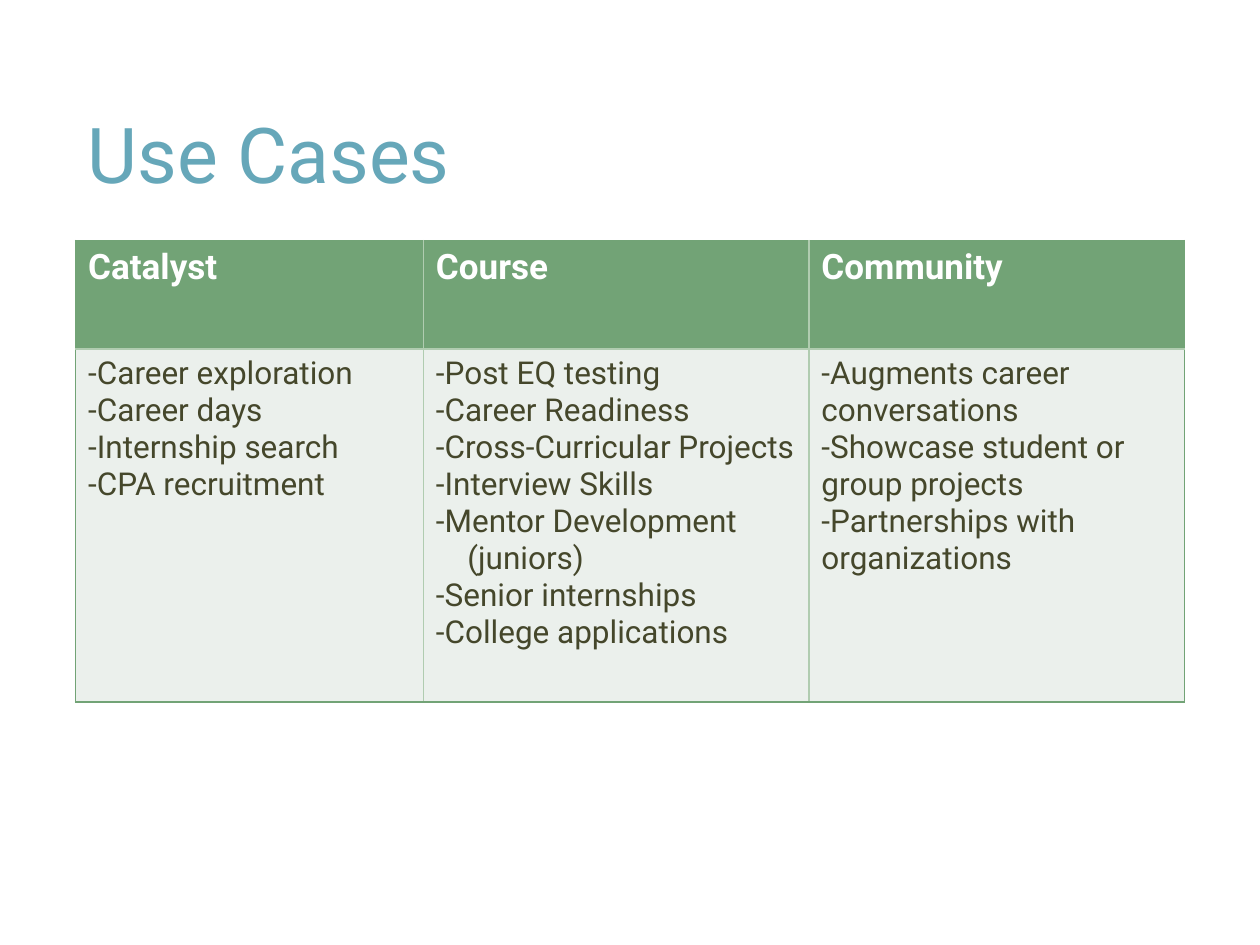
from pptx import Presentation
from pptx.dml.color import RGBColor as Rgb
from pptx.enum.text import MSO_ANCHOR as Anchor
from pptx.oxml import parse_xml
from pptx.oxml.ns import nsdecls
from pptx.util import Inches, Pt

WIDE, HIGH = Inches(10), Inches(7.5)
FONT = "Roboto"
COLORS = {
    "title": "66A7B9",
    "head": "72A376",
    "body": "EBF0EC",
    "rule": "B0CCB0",
    "white": "FFFFFF",
    "text": "45472B",
}
HANG = Inches(0.25)

# Column heading, relative width, items
CASES = [
    ("Catalyst", 2.76, [
        "-Career exploration", "-Career days",
        "-Internship search", "-CPA recruitment"]),
    ("Course", 3.06, [
        "-Post EQ testing", "-Career Readiness",
        "-Cross-Curricular Projects", "-Interview Skills",
        "-Mentor Development (juniors)",
        "-Senior internships", "-College applications"]),
    ("Community", 2.98, [
        "-Augments career conversations",
        "-Showcase student or group projects",
        "-Partnerships with organizations"]),
]
ROWS = (0.86, 2.8)


def share(x, y, w, h):
    """Turn percentages of the slide into a box."""
    sizes = (x * WIDE, y * HIGH, w * WIDE, h * HIGH)
    return [int(n / 100) for n in sizes]


def add_run(para, text, size, color, bold=False):
    run = para.add_run()
    run.text = text
    font = run.font
    font.name, font.size, font.bold = FONT, Pt(size), bold
    font.color.rgb = Rgb.from_string(COLORS[color])


def add_lines(frame, lines, *style):
    for i, line in enumerate(lines):
        para = frame.add_paragraph() if i else frame.paragraphs[0]
        add_run(para, line, *style)
        # The wrapped "(juniors)" hangs under its item
        if line.endswith("(juniors)"):
            props = para._p.get_or_add_pPr()
            props.set("marL", str(HANG))
            props.set("indent", str(-HANG))


def add_edges(cell, edges):
    """Draw the cell's sides, given as color names for L, R, T, B."""
    props = cell._tc.get_or_add_tcPr()
    for i, (side, color) in enumerate(zip("LRTB", edges)):
        props.insert(i, parse_xml(
            f'<a:ln{side} {nsdecls("a")} w="{Pt(1)}"><a:solidFill>'
            f'<a:srgbClr val="{COLORS[color]}"/></a:solidFill></a:ln{side}>'))


def add_title(slide, box, text):
    frame = slide.shapes.add_textbox(*box).text_frame
    frame.word_wrap = True
    frame.vertical_anchor = Anchor.BOTTOM
    add_run(frame.paragraphs[0], text, 44, "title")


def add_cases(slide, box):
    last = len(CASES) - 1
    table = slide.shapes.add_table(len(ROWS), len(CASES), *box).table
    total = sum(case[1] for case in CASES)
    for row, part in zip(table.rows, ROWS):
        row.height = int(box[3] * part / sum(ROWS))
    for c, (head, width, items) in enumerate(CASES):
        table.columns[c].width = int(box[2] * width / total)
        left = "rule" if c else "head"
        right = "rule" if c < last else "head"
        # Heading cell above, list cell below
        parts = [
            ("head", [head], (20, "white", True), ("head", "rule")),
            ("body", items, (18, "text"), ("rule", "head")),
        ]
        for r, (fill, lines, style, ends) in enumerate(parts):
            cell = table.cell(r, c)
            cell.fill.solid()
            cell.fill.fore_color.rgb = Rgb.from_string(COLORS[fill])
            add_lines(cell.text_frame, lines, *style)
            add_edges(cell, (left, right, *ends))


def main():
    deck = Presentation()
    deck.slide_width, deck.slide_height = WIDE, HIGH
    slide = deck.slides.add_slide(deck.slide_layouts[6])
    add_title(slide, share(6, 7.7, 88, 14), "Use Cases")
    add_cases(slide, share(6, 25.47, 88, 48.8))
    deck.save("out.pptx")


if __name__ == "__main__":
    main()
